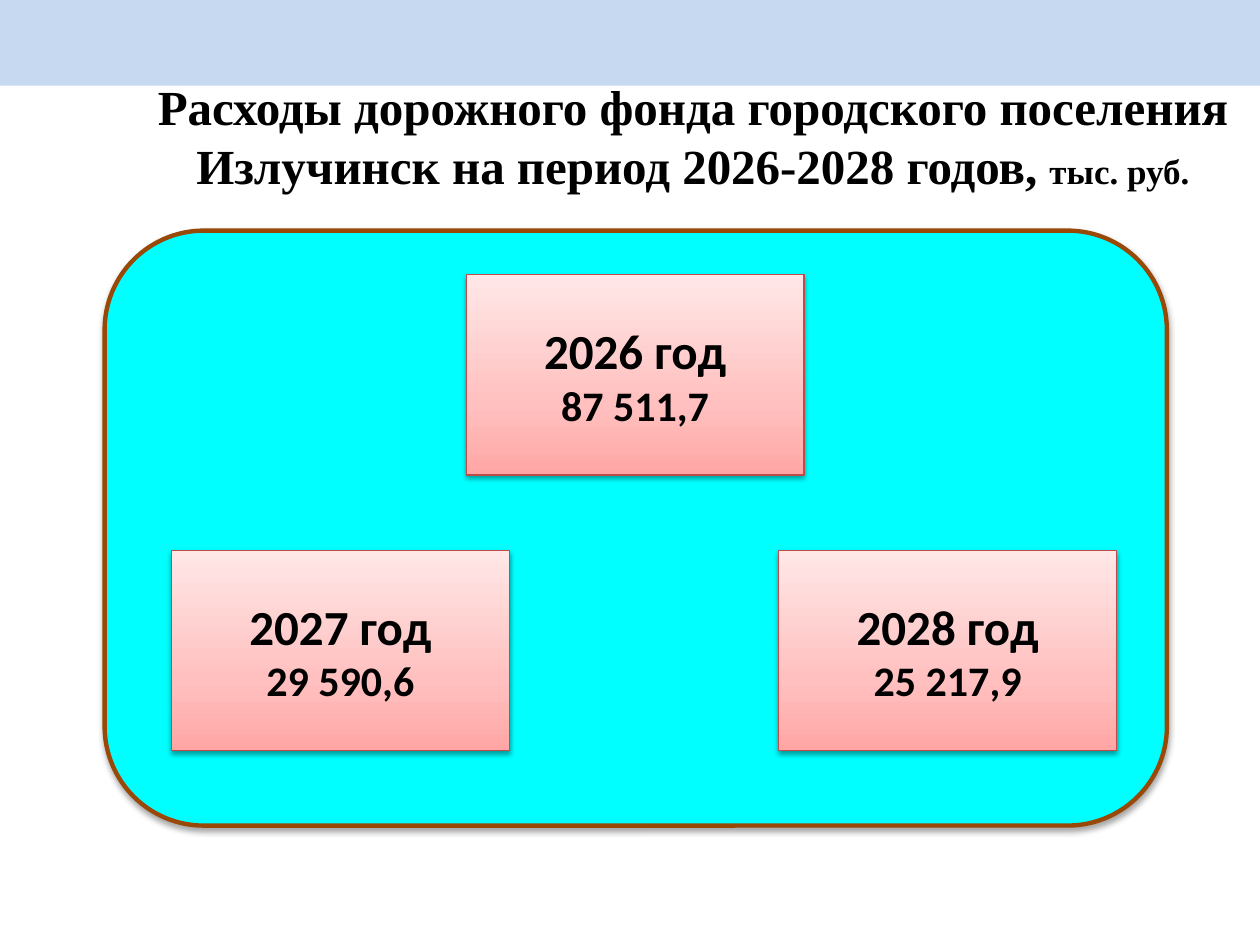
from copy import deepcopy

from lxml.etree import SubElement
from pptx import Presentation
from pptx.dml.color import RGBColor
from pptx.enum.shapes import MSO_SHAPE as SHAPE
from pptx.enum.text import MSO_ANCHOR as ANCHOR, PP_ALIGN as ALIGN
from pptx.oxml.ns import qn
from pptx.util import Pt

BLACK = RGBColor(0x00, 0x00, 0x00)
BAND = RGBColor(0xC6, 0xD9, 0xF1)
CYAN = RGBColor(0x00, 0xFF, 0xFF)
BROWN = RGBColor(0x98, 0x48, 0x07)
RED = RGBColor(0xBF, 0x4C, 0x48)
PINK_STOPS = [
    (0, RGBColor(0xFF, 0xA6, 0xA5)),
    (0.35, RGBColor(0xFF, 0xC0, 0xBF)),
    (1, RGBColor(0xFF, 0xE7, 0xE7)),
]

CARD_WIDTH, CARD_HEIGHT = 193, 114.5
YEARS = [
    ("2026 год", "87 511,7", 266.4, 157),
    ("2028 год", "25 217,9", 445, 314.6),
    ("2027 год", "29 590,6", 98, 314.6),
]


def add_text(paragraph, text, *, size, font="Calibri", bold=True, color=BLACK):
    paragraph.alignment = ALIGN.CENTER
    run = paragraph.add_run()
    run.text = text
    run.font.size = Pt(size)
    run.font.name = font
    run.font.bold = bold
    run.font.color.rgb = color


def add_box(slide, kind, left, top, width, height, fill=None, line=None, line_width=0):
    box = slide.shapes.add_shape(kind, Pt(left), Pt(top), Pt(width), Pt(height))
    box.shadow.inherit = False
    if fill is not None:
        box.fill.solid()
        box.fill.fore_color.rgb = fill
    if line is None:
        box.line.fill.background()
    else:
        box.line.color.rgb = line
        box.line.width = Pt(line_width)
    return box


def add_shadow(box, distance, opacity):
    effects = box._element.spPr.find(qn("a:effectLst"))
    shadow = SubElement(effects, qn("a:outerShdw"), blurRad=str(Pt(3.1)),
                        dist=str(Pt(distance)), dir="5400000", rotWithShape="0")
    color = SubElement(shadow, qn("a:srgbClr"), val=str(BLACK))
    SubElement(color, qn("a:alpha"), val=str(opacity * 1000))


def fill_pink(box):
    box.fill.gradient()
    box.fill.gradient_angle = 90
    # The default gradient has two stops; a third is needed
    stop_list = box._element.spPr.find(qn("a:gradFill")).find(qn("a:gsLst"))
    stop_list.append(deepcopy(stop_list[0]))
    for stop, (position, color) in zip(box.fill.gradient_stops, PINK_STOPS):
        stop.position = position
        stop.color.rgb = color


def add_title(slide):
    title = slide.shapes.add_textbox(Pt(72), Pt(40.3), Pt(648), Pt(90)).text_frame
    title.word_wrap = True
    title.vertical_anchor = ANCHOR.TOP
    heading = title.paragraphs[0]
    add_text(heading, "Расходы дорожного фонда городского поселения "
             "Излучинск на период 2026-2028 годов, ", size=28, font="Times New Roman")
    add_text(heading, "тыс. руб.", size=20, font="Times New Roman")


def add_year_card(slide, year, amount, left, top):
    card = add_box(slide, SHAPE.RECTANGLE, left, top, CARD_WIDTH, CARD_HEIGHT,
                   line=RED, line_width=0.75)
    fill_pink(card)
    add_shadow(card, distance=1.6, opacity=38)
    frame = card.text_frame
    frame.vertical_anchor = ANCHOR.MIDDLE
    add_text(frame.paragraphs[0], year, size=28)
    add_text(frame.add_paragraph(), amount, size=24)


def main():
    deck = Presentation()
    deck.slide_width, deck.slide_height = Pt(720), Pt(540)
    slide = deck.slides.add_slide(deck.slide_layouts[6])

    # Top band and title
    add_box(slide, SHAPE.RECTANGLE, 0, 0, 720, 49, fill=BAND)
    add_title(slide)

    # Panel behind the yearly amounts
    panel = add_box(slide, SHAPE.ROUNDED_RECTANGLE, 59.8, 131.8, 607, 340,
                    fill=CYAN, line=BROWN, line_width=2.5)
    add_shadow(panel, distance=1.8, opacity=35)

    # One card per year
    for year, amount, left, top in YEARS:
        add_year_card(slide, year, amount, left, top)

    deck.save("out.pptx")


if __name__ == "__main__":
    main()
